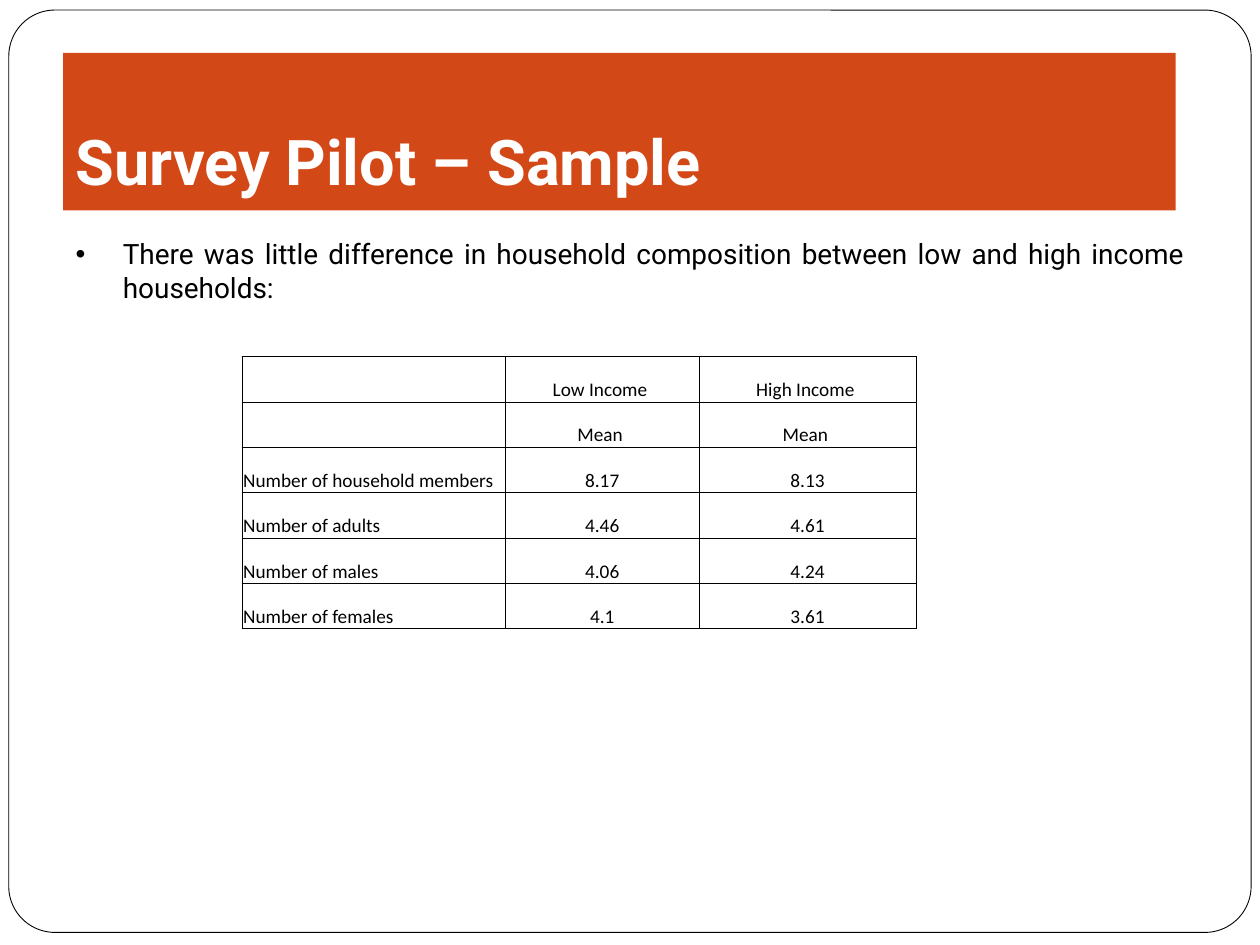
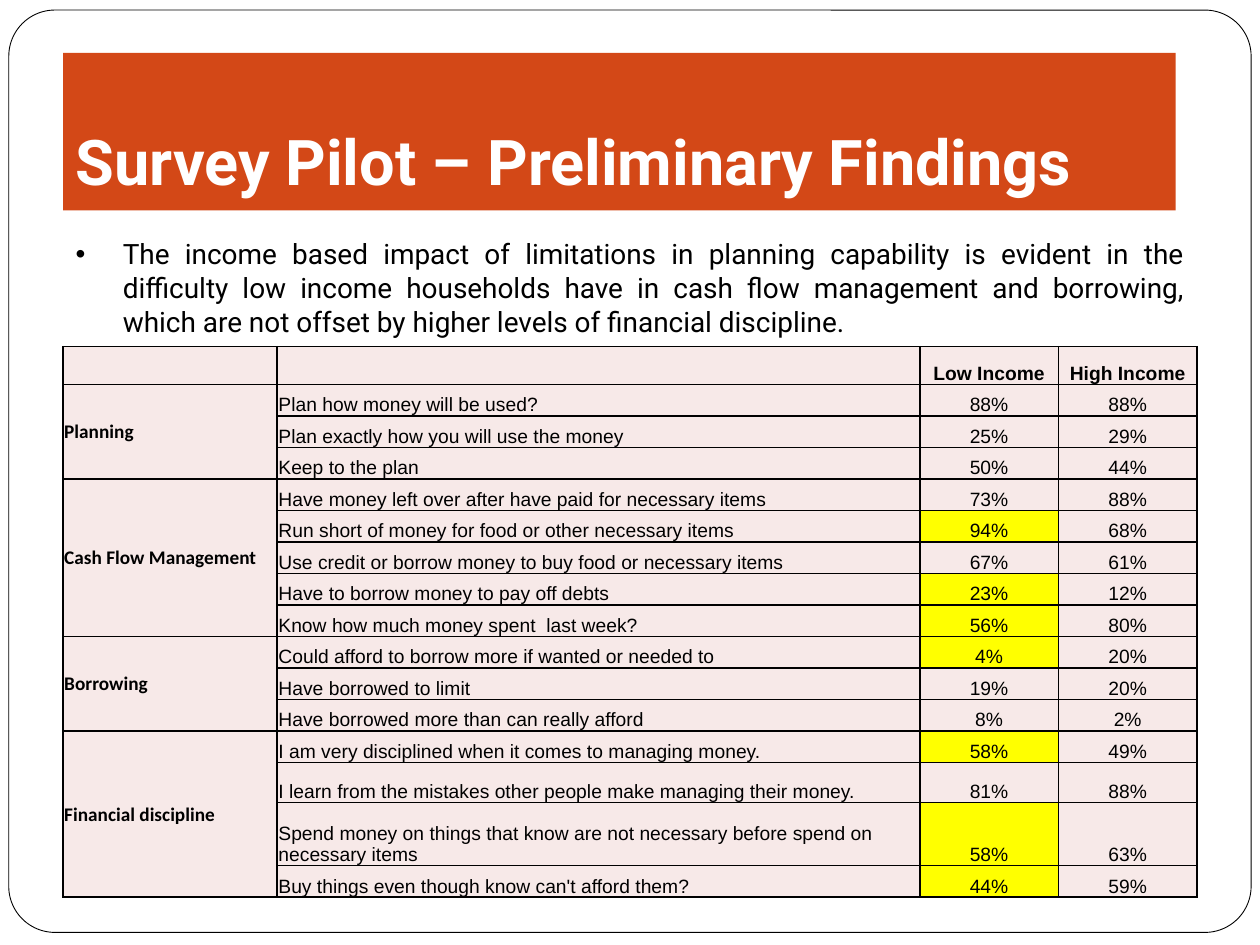
from lxml.etree import SubElement
from pptx import Presentation
from pptx.dml.color import RGBColor
from pptx.enum.shapes import MSO_SHAPE
from pptx.enum.text import MSO_ANCHOR, MSO_AUTO_SIZE, PP_ALIGN
from pptx.oxml.ns import qn
from pptx.util import Inches, Pt

ROUND = MSO_SHAPE.ROUNDED_RECTANGLE
LEFT, MID, JUST = PP_ALIGN.LEFT, PP_ALIGN.CENTER, PP_ALIGN.JUSTIFY
TOP, CENTRE, BASE = MSO_ANCHOR.TOP, MSO_ANCHOR.MIDDLE, MSO_ANCHOR.BOTTOM
FIXED = MSO_AUTO_SIZE.NONE

BLACK, WHITE, RUST, PINK, YELLOW = "000000", "FFFFFF", "D34817", "F7E9E8", "FFFF00"
HEAD, BODY, SANS = "Roboto", "Calibri", "Arial"

SAMPLE = {
    "title": "Survey Pilot – Sample",
    "point": "There was little difference in household composition between "
             "low and high income households: ",
    "rows": [
        ("", "Low Income ", "High Income "),
        ("", "Mean ", "Mean "),
        ("Number of household members", "8.17", "8.13"),
        ("Number of adults", "4.46", "4.61"),
        ("Number of males", "4.06", "4.24"),
        ("Number of females", "4.1", "3.61"),
    ],
}

FINDINGS = {
    "title": "Survey Pilot – Preliminary Findings",
    "point": "The income based impact of limitations in planning capability is evident "
             "in the difficulty low income households have in cash flow management and "
             "borrowing, which are not offset by higher levels of financial discipline.",
    "heads": ("", "", "Low Income", "High Income"),
    "groups": {
        "Planning": [
            ("Plan how money will be used?", 88, 88),
            ("Plan exactly how you will use the money", 25, 29),
            ("Keep to the plan", 50, 44),
        ],
        "Cash Flow Management": [
            ("Have money left over after have paid for necessary items", 73, 88),
            ("Run short of money for food or other necessary items", 94, 68),
            ("Use credit or borrow money to buy food or necessary items", 67, 61),
            ("Have to borrow money to pay off debts", 23, 12),
            ("Know how much money spent  last week?", 56, 80),
        ],
        "Borrowing": [
            ("Could afford to borrow more if wanted or needed to", 4, 20),
            ("Have borrowed to limit", 19, 20),
            ("Have borrowed more than can really afford", 8, 2),
        ],
        "Financial discipline": [
            ("I am very disciplined when it comes to managing money.", 58, 49),
            ("I learn from the mistakes other people make managing their money.", 81, 88),
            ("Spend money on things that know are not necessary before spend on "
             "necessary items", 58, 63),
            ("Buy things even though know can't afford them?", 44, 59),
        ],
    },
    "marked": {5, 7, 8, 9, 12, 14, 15},
}


def tint(code):
    return RGBColor.from_string(code)


def write(frame, text, font=BODY, size=11, color=BLACK, bold=False, align=LEFT, anchor=BASE):
    frame.vertical_anchor = anchor
    para = frame.paragraphs[0]
    para.alignment = align
    run = para.add_run()
    run.text = text
    run.font.name = font
    run.font.size = Pt(size)
    run.font.bold = bold
    run.font.color.rgb = tint(color)


def place(shape, left, top, width, height):
    shape.left, shape.top = Inches(left), Inches(top)
    shape.width, shape.height = Inches(width), Inches(height)


def start(deck, data):
    slide = deck.slides.add_slide(deck.slide_layouts[1])
    border = slide.shapes.add_shape(ROUND, Inches(0.07), Inches(0.08), Inches(9.86), Inches(7.32))
    border.adjustments[0] = 0.05
    border.shadow.inherit = False
    border.fill.solid()
    border.fill.fore_color.rgb = tint(WHITE)
    border.line.color.rgb = tint(BLACK)
    border.line.width = Pt(0.5)
    slide.shapes._spTree.insert(2, border._element)

    title, body = slide.placeholders
    place(title, 0.5, 0.42, 8.83, 1.25)
    title.fill.solid()
    title.fill.fore_color.rgb = tint(RUST)
    title.text_frame.margin_bottom = Inches(0.1)
    write(title.text_frame, data["title"], HEAD, 36, WHITE, bold=True)
    place(body, 0.5, 1.83, 9, 5.42)
    write(body.text_frame, data["point"], HEAD, 16, align=JUST, anchor=TOP)
    for item in (title, body):
        item.text_frame.auto_size = FIXED
        item.text_frame.word_wrap = True
    return slide


def edge(cell, width):
    props = cell._tc.get_or_add_tcPr()
    for spot, side in enumerate(("lnL", "lnR", "lnT", "lnB")):
        line = SubElement(props, qn("a:" + side), w=str(Pt(width)))
        fill = SubElement(line, qn("a:solidFill"))
        SubElement(fill, qn("a:srgbClr"), val=BLACK)
        props.insert(spot, line)


def grid(slide, left, top, cols, rows, line, fill=None):
    table = slide.shapes.add_table(
        len(rows), len(cols), Inches(left), Inches(top),
        Inches(sum(cols)), Inches(sum(rows))).table
    table.first_row = table.horz_banding = False
    for col, width in zip(table.columns, cols):
        col.width = Inches(width)
    for row, height in zip(table.rows, rows):
        row.height = Inches(height)
    for cell in table.iter_cells():
        cell.margin_left = cell.margin_right = cell.margin_top = Inches(0.01)
        cell.margin_bottom = 0
        paint(cell, fill)
        edge(cell, line)
    return table


def paint(cell, color):
    if color:
        cell.fill.solid()
        cell.fill.fore_color.rgb = tint(color)
    else:
        cell.fill.background()


def enter(cell, text, anchor=BASE, **style):
    write(cell.text_frame, text, **style)
    cell.vertical_anchor = anchor


def sample(deck):
    slide = start(deck, SAMPLE)
    rows = SAMPLE["rows"]
    table = grid(slide, 1.92, 2.83, (2.09, 1.54, 1.72), [0.36] * len(rows), 0.5)
    for r, row in enumerate(rows):
        for c, text in enumerate(row):
            enter(table.cell(r, c), text, align=MID if c else LEFT)


def findings(deck):
    slide = start(deck, FINDINGS)
    high = [0.3] + [0.25] * 12 + [0.32, 0.5, 0.25]
    table = grid(slide, 0.5, 2.75, (1.7, 5.1, 1.1, 1.1), high, 1, PINK)
    for c, text in enumerate(FINDINGS["heads"]):
        enter(table.cell(0, c), text, font=SANS, bold=True, align=MID)
    r = 1
    for name, items in FINDINGS["groups"].items():
        first = table.cell(r, 0)
        first.merge(table.cell(r + len(items) - 1, 0))
        enter(first, name, CENTRE, bold=True)
        for ask, *rates in items:
            enter(table.cell(r, 1), ask, font=SANS)
            for c, rate in enumerate(rates, 2):
                enter(table.cell(r, c), f"{rate}%", font=SANS, align=MID)
            if r in FINDINGS["marked"]:
                paint(table.cell(r, 2), YELLOW)
            r += 1


def main():
    deck = Presentation()
    deck.slide_width, deck.slide_height = Inches(10), Inches(7.5)
    sample(deck)
    findings(deck)
    deck.save("out.pptx")


if __name__ == "__main__":
    main()
